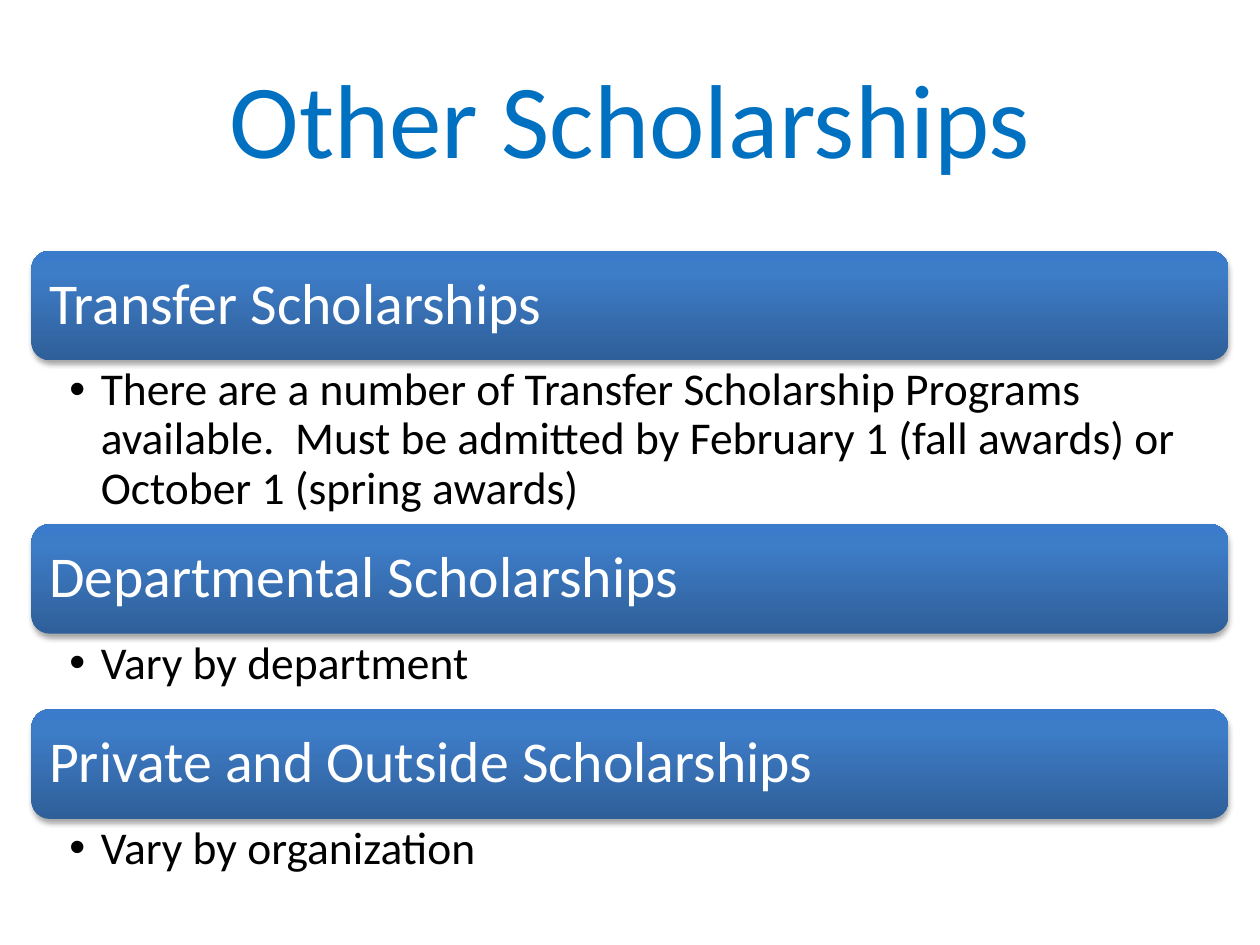
from lxml import etree
from pptx import Presentation
from pptx.dml.color import RGBColor
from pptx.enum.shapes import MSO_SHAPE as Shape
from pptx.enum.text import MSO_ANCHOR as Anchor, PP_ALIGN as Align
from pptx.oxml import parse_xml
from pptx.oxml.ns import nsdecls, qn
from pptx.util import Inches, Pt

COLORS = {
    "title": "0070C0",
    "bar_low": "2F5F99",
    "bar_mid": "3D7CC7",
    "bar_top": "3A7CCB",
    "bar_text": "FFFFFF",
    "body": "000000",
    "shadow": "000000",
}
BAR_STOPS = [(0, "bar_low"), (80, "bar_mid"), (100, "bar_top")]
LEFT, WIDTH = 0.25, 9.5
LIST_TOP, BAR_HEIGHT = 1.99, 0.87

# Heading, detail, height of the detail
SECTIONS = [
    ("Transfer Scholarships",
     "There are a number of Transfer Scholarship Programs available.  "
     "Must be admitted by February 1 (fall awards) or October 1 (spring awards)", 1.3),
    ("Departmental Scholarships", "Vary by department", 0.6),
    ("Private and Outside Scholarships", "Vary by organization", 0.6),
]


class ScholarshipSlide:
    font = "Calibri"

    def __init__(self, slide):
        self.slide = slide

    def set_text(self, holder, text, size, color, insets, anchor, align=Align.LEFT, spacing=1.0):
        frame = holder.text_frame
        frame.word_wrap = True
        frame.vertical_anchor = anchor
        (frame.margin_left, frame.margin_top,
         frame.margin_right, frame.margin_bottom) = map(Inches, insets)
        frame.text = text
        paragraph = frame.paragraphs[0]
        paragraph.alignment = align
        paragraph.line_spacing = spacing
        font = paragraph.runs[0].font
        font.name, font.size = self.font, Pt(size)
        font.color.rgb = RGBColor.from_string(COLORS[color])
        return paragraph

    def title(self, text):
        box = self.slide.shapes.add_textbox(Inches(0.5), Inches(0.3), Inches(9), Inches(1.25))
        self.set_text(box, text, 60, "title", (0.1, 0.05, 0.1, 0.05), Anchor.MIDDLE, Align.CENTER)

    def bar(self, text, top):
        bar = self.slide.shapes.add_shape(
            Shape.ROUNDED_RECTANGLE, Inches(LEFT), Inches(top), Inches(WIDTH), Inches(BAR_HEIGHT))
        bar.line.fill.background()
        self.shade(bar)
        self.cast_shadow(bar)
        # The rounded corners add a little to these insets
        self.set_text(bar, text, 33, "bar_text", (0.1,) * 4, Anchor.MIDDLE, spacing=0.9)

    def shade(self, bar):
        bar.fill.gradient()
        bar.fill.gradient_angle = 90
        stops = bar._element.spPr.find(qn("a:gradFill")).find(qn("a:gsLst"))
        for stop in list(stops):
            stops.remove(stop)
        for position, color in BAR_STOPS:
            stop = etree.SubElement(stops, qn("a:gs"), pos=str(position * 1000))
            etree.SubElement(stop, qn("a:srgbClr"), val=COLORS[color])

    def cast_shadow(self, bar):
        bar.shadow.inherit = False
        bar._element.spPr.find(qn("a:effectLst")).append(parse_xml(
            f'<a:outerShdw {nsdecls("a")} blurRad="{Pt(3.1)}" dist="{Pt(1.8)}" '
            f'dir="5400000" rotWithShape="0"><a:srgbClr val="{COLORS["shadow"]}">'
            '<a:alpha val="35000"/></a:srgbClr></a:outerShdw>'))

    def detail(self, text, top, height):
        box = self.slide.shapes.add_textbox(
            Inches(LEFT), Inches(top), Inches(WIDTH), Inches(height))
        paragraph = self.set_text(box, text, 26, "body", (0.3, 0.05, 0.26, 0.05),
                                  Anchor.TOP, spacing=0.9)
        properties = paragraph._p.get_or_add_pPr()
        properties.set("marL", str(Inches(0.25)))
        properties.set("indent", str(-Inches(0.25)))
        etree.SubElement(properties, qn("a:buFont"), typeface="Arial")
        etree.SubElement(properties, qn("a:buChar"), char="•")


def main():
    deck = Presentation()
    deck.slide_width, deck.slide_height = Inches(10), Inches(7.5)
    page = ScholarshipSlide(deck.slides.add_slide(deck.slide_layouts[6]))

    page.title("Other Scholarships")

    # Bars with their details, stacked without gaps
    top = LIST_TOP
    for heading, detail, height in SECTIONS:
        page.bar(heading, top)
        page.detail(detail, top + BAR_HEIGHT, height)
        top += BAR_HEIGHT + height

    deck.save("out.pptx")


if __name__ == "__main__":
    main()
